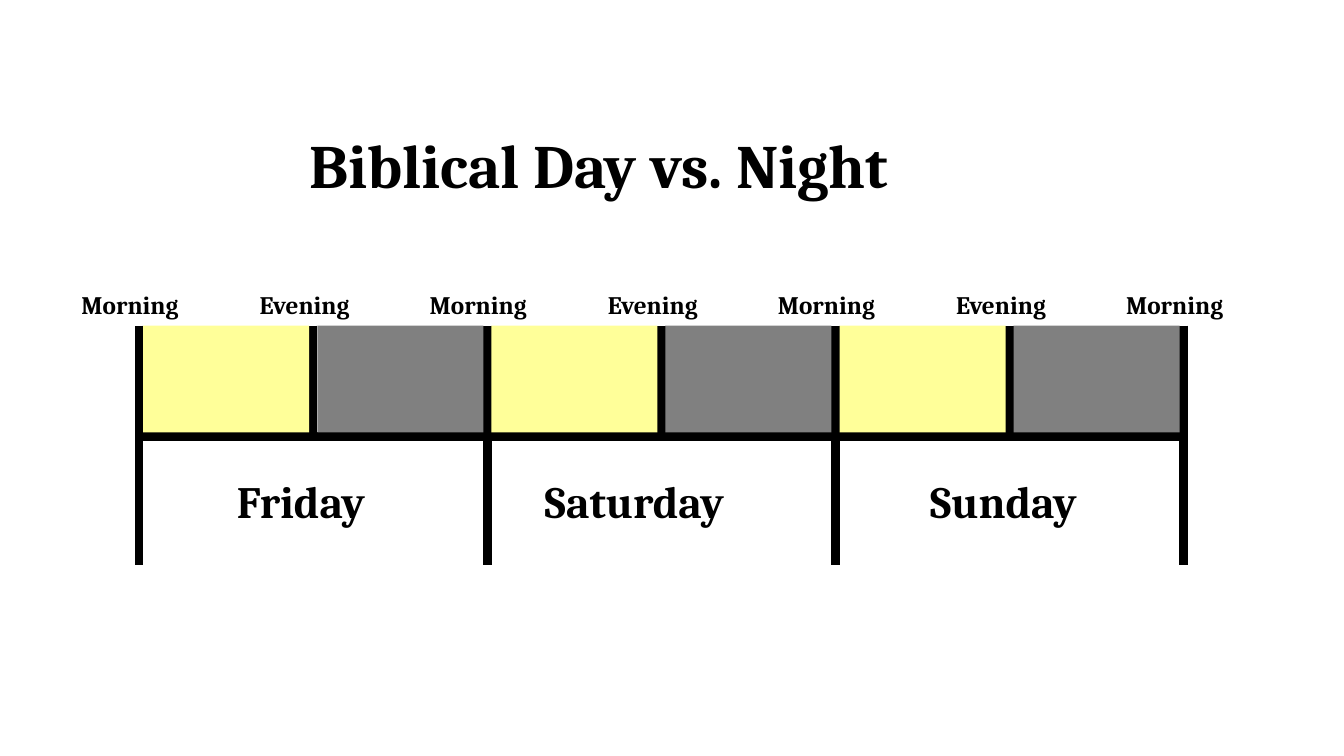
from pptx import Presentation
from pptx.dml.color import RGBColor
from pptx.enum.shapes import MSO_CONNECTOR, MSO_SHAPE
from pptx.enum.text import MSO_ANCHOR, MSO_AUTO_SIZE, PP_ALIGN
from pptx.oxml.ns import qn
from pptx.util import Inches, Pt
from lxml import etree

STRAIGHT = MSO_CONNECTOR.STRAIGHT
RECTANGLE = MSO_SHAPE.RECTANGLE
TOP = MSO_ANCHOR.TOP
LEFT = PP_ALIGN.LEFT
NO_AUTOFIT = MSO_AUTO_SIZE.NONE

BLACK, DAYLIGHT, NIGHT = "000000", "FFFF99", "808080"
TITLE_ONLY = 5

# Day name, with the left edge and width of its text relative to the day's start
DAYS = [("Friday", 0.87, 1.71), ("Saturday", 0.47, 2.3), ("Sunday", 0.84, 1.93)]
# Hour label, with its offset from the post and its width
HOURS = [("Morning", -0.67, 1.33), ("Evening", -0.63, 1.25)]


def color(value):
    return RGBColor.from_string(value)


def write_text(shape, text, size, bold=True, font="Cambria", fill=BLACK):
    frame = shape.text_frame
    frame.word_wrap = True
    frame.auto_size = NO_AUTOFIT
    frame.vertical_anchor = TOP
    paragraph = frame.paragraphs[0]
    paragraph.alignment = LEFT
    run = paragraph.add_run()
    run.text = text
    run.font.name = font
    run.font.size = Pt(size)
    run.font.bold = bold
    run.font.color.rgb = color(fill)


def add_label(slide, text, left, top, width, height, size):
    box = slide.shapes.add_textbox(
        Inches(left), Inches(top), Inches(width), Inches(height))
    write_text(box, text, size)


def add_line(slide, x1, y1, x2, y2):
    line = slide.shapes.add_connector(
        STRAIGHT, Inches(x1), Inches(y1), Inches(x2), Inches(y2))
    line.line.color.rgb = color(BLACK)
    line.line.width = Pt(6)
    etree.SubElement(line._element.spPr, qn("a:effectLst"))


def add_band(slide, left, top, width, height, fill):
    band = slide.shapes.add_shape(
        RECTANGLE, Inches(left), Inches(top), Inches(width), Inches(height))
    band.shadow.inherit = False
    band.fill.solid()
    band.fill.fore_color.rgb = color(fill)
    band.line.fill.background()


def add_title(slide, left, top, width, height):
    title = slide.shapes.title
    title.left, title.top = Inches(left), Inches(top)
    title.width, title.height = Inches(width), Inches(height)
    write_text(title, "Biblical Day vs. Night", 44)


def add_timeline(slide, left, top, width, height):
    halves = 2 * len(DAYS)
    step = width / halves
    axis = top + 1.1

    # Axis and posts: long at each morning, short at each evening
    add_line(slide, left, axis, left + width, axis)
    for index in range(halves + 1):
        post = left + index * step
        add_line(slide, post, top, post, axis if index % 2 else top + height)
        text, offset, label_width = HOURS[index % 2]
        add_label(slide, text, post + offset, top - 0.41, label_width, 0.4, 18)

    # Daylight and night bands between the posts
    for index in range(halves):
        add_band(slide, left + index * step + 0.04, top, step - 0.08, 1.06,
                 NIGHT if index % 2 else DAYLIGHT)

    # Day names under the axis
    for index, (name, offset, label_width) in enumerate(DAYS):
        add_label(slide, name, left + 2 * index * step + offset, axis + 0.32,
                  label_width, 0.64, 32)


def main():
    presentation = Presentation()
    presentation.slide_width = Inches(13.33)
    presentation.slide_height = Inches(7.5)
    slide = presentation.slides.add_slide(presentation.slide_layouts[TITLE_ONLY])
    add_title(slide, 2.97, 1.21, 6.95, 0.84)
    add_timeline(slide, 1.38, 3.23, 10.36, 2.38)
    presentation.save("out.pptx")


if __name__ == "__main__":
    main()
